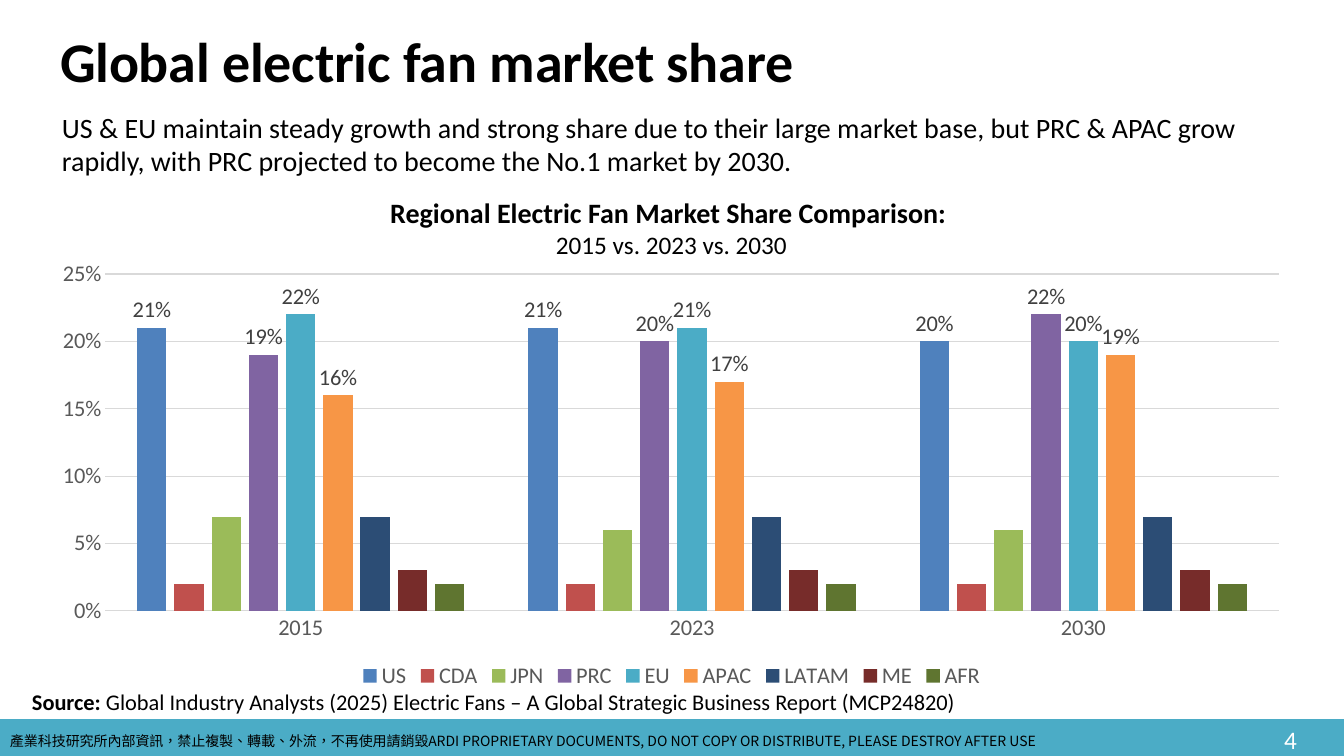
from lxml import etree
from pptx import Presentation
from pptx.chart.data import CategoryChartData
from pptx.dml.color import RGBColor
from pptx.enum.chart import (XL_CHART_TYPE as Chart, XL_LABEL_POSITION as LabelPos,
                             XL_LEGEND_POSITION as LegendPos, XL_TICK_MARK as Tick)
from pptx.enum.shapes import MSO_SHAPE as Shape
from pptx.enum.text import MSO_ANCHOR as Anchor, PP_ALIGN as Align
from pptx.oxml import parse_xml
from pptx.oxml.ns import nsdecls, qn
from pptx.util import Pt

PX = 914400 / 100.8
FONT, CJK_FONT = "Calibri", "Noto Sans CJK SC"
BLACK = RGBColor(0, 0, 0)
WHITE = RGBColor(255, 255, 255)
TEAL = RGBColor(0x4B, 0xAC, 0xC6)
AXIS_GREY = RGBColor(0x59, 0x59, 0x59)
LABEL_GREY = RGBColor(0x40, 0x40, 0x40)
GRID_GREY = RGBColor(0xD9, 0xD9, 0xD9)

# Each paragraph is a list of (text, size, bold) runs
TITLE = [[("Global electric fan market share", 40, True)]]
SUMMARY = [[("US & EU maintain steady growth and strong share due to their large market base, "
             "but PRC & APAC grow rapidly, with PRC projected to become the No.1 market by 2030.",
             20, False)]]
CHART_TITLE = [[("Regional Electric Fan Market Share Comparison: ", 20, True)],
               [("2015 vs. 2023 vs. 2030", 18, False)]]
SOURCE = [[("Source: ", 16, True),
           ("Global Industry Analysts (2025) Electric Fans – A Global Strategic "
            "Business Report (MCP24820)", 16, False)]]
NOTICE = [[("產業科技研究所內部資訊，禁止複製、轉載、外流，不再使用請銷毀"
            "ARDI PROPRIETARY DOCUMENTS, DO NOT COPY OR DISTRIBUTE, "
            "PLEASE DESTROY AFTER USE", 10, False)]]
PAGE = [[("4", 18, False)]]

YEARS = ["2015", "2023", "2030"]
# Region, shares, colour, labelled
REGIONS = [
    ("US", (0.21, 0.21, 0.2), RGBColor(0x4F, 0x81, 0xBD), True),
    ("CDA", (0.02, 0.02, 0.02), RGBColor(0xC0, 0x50, 0x4D), False),
    ("JPN", (0.07, 0.06, 0.06), RGBColor(0x9B, 0xBB, 0x59), False),
    ("PRC", (0.19, 0.2, 0.22), RGBColor(0x80, 0x64, 0xA2), True),
    ("EU", (0.22, 0.21, 0.2), TEAL, True),
    ("APAC", (0.16, 0.17, 0.19), RGBColor(0xF7, 0x96, 0x46), True),
    ("LATAM", (0.07, 0.07, 0.07), RGBColor(0x2C, 0x4D, 0x75), False),
    ("ME", (0.03, 0.03, 0.03), RGBColor(0x77, 0x2C, 0x2A), False),
    ("AFR", (0.02, 0.02, 0.02), RGBColor(0x5F, 0x75, 0x30), False),
]
CHART_BOX = (38, 252, 1267, 442)
PLOT_BOX = (105, 274, 1174, 337)


def px(*lengths):
    return [round(v * PX) for v in lengths]


def set_font(font, size, color, bold=False, name=FONT):
    values = {"size": Pt(size), "bold": bold, "name": name}
    for key, value in values.items():
        setattr(font, key, value)
    font.color.rgb = color


def add_text(s, box, paragraphs, color=BLACK, align=Align.LEFT, anchor=Anchor.TOP,
             name=FONT, margins=(10, 5, 10, 5)):
    tf = s.shapes.add_textbox(*px(*box)).text_frame
    tf.word_wrap, tf.vertical_anchor = True, anchor
    for side, margin in zip(("left", "top", "right", "bottom"), px(*margins)):
        setattr(tf, f"margin_{side}", margin)
    for i, runs in enumerate(paragraphs):
        p = tf.add_paragraph() if i else tf.paragraphs[0]
        p.alignment = align
        for text, size, bold in runs:
            r = p.add_run()
            r.text = text
            set_font(r.font, size, color, bold, name)
            ea = etree.SubElement(r.font._element, qn("a:ea"))
            ea.set("typeface", name)
    return tf


def place_plot(chart):
    """Fix the inner plot area as fractions of the chart box."""
    left, top, width, height = CHART_BOX
    x, y, w, h = PLOT_BOX
    parts = {"x": (x - left) / width, "y": (y - top) / height,
             "w": w / width, "h": h / height}
    modes = "".join(f'<c:{k}Mode val="edge"/>' for k in "xy")
    sizes = "".join(f'<c:{k} val="{v:.4f}"/>' for k, v in parts.items())
    layout = parse_xml(f'<c:layout {nsdecls("c")}><c:manualLayout>'
                       f'<c:layoutTarget val="inner"/>{modes}{sizes}'
                       '</c:manualLayout></c:layout>')
    plot_area = chart._chartSpace.chart.plotArea
    for old in plot_area.findall(qn("c:layout")):
        plot_area.remove(old)
    plot_area.insert(0, layout)


def add_share_chart(s):
    data = CategoryChartData(number_format="0%")
    data.categories = YEARS
    for region, shares, *_ in REGIONS:
        data.add_series(region, shares)
    chart = s.shapes.add_chart(Chart.COLUMN_CLUSTERED, *px(*CHART_BOX), data).chart
    set_font(chart.font, 16, BLACK)
    chart.has_title = False
    chart.has_legend = True
    chart.legend.position = LegendPos.BOTTOM
    chart.legend.include_in_layout = False
    set_font(chart.legend.font, 16, AXIS_GREY)

    cat, val = chart.category_axis, chart.value_axis
    for axis in (cat, val):
        axis.major_tick_mark = axis.minor_tick_mark = Tick.NONE
        set_font(axis.tick_labels.font, 16, AXIS_GREY)
    for line in (cat.format.line, val.major_gridlines.format.line):
        line.color.rgb, line.width = GRID_GREY, Pt(0.75)
    val.format.line.fill.background()
    val.minimum_scale, val.maximum_scale, val.major_unit = 0, 0.25, 0.05
    val.tick_labels.number_format = "0%"
    val.tick_labels.number_format_is_linked = False

    plot = chart.plots[0]
    plot.gap_width, plot.overlap, plot.vary_by_categories = 219, -27, False
    for series, (_, _, color, labelled) in zip(plot.series, REGIONS):
        series.format.fill.solid()
        series.format.fill.fore_color.rgb = color
        series.invert_if_negative = False
        if labelled:
            labels = series.data_labels
            labels.show_value = True
            labels.number_format, labels.number_format_is_linked = "0%", False
            labels.position = LabelPos.OUTSIDE_END
            set_font(labels.font, 16, LABEL_GREY)
    place_plot(chart)


def main():
    prs = Presentation()
    prs.slide_width, prs.slide_height = px(1344, 756)
    s = prs.slides.add_slide(prs.slide_layouts[6])

    band = s.shapes.add_shape(Shape.RECTANGLE, *px(0, 720, 1344, 36))
    band.shadow.inherit = False
    band.fill.solid()
    band.fill.fore_color.rgb = band.line.color.rgb = TEAL
    band.line.width = Pt(1)
    notice = add_text(s, (0, 728, 1195, 27), NOTICE, name=CJK_FONT)
    notice.paragraphs[0].runs[0].font._element.set("lang", "zh-TW")

    add_share_chart(s)
    add_text(s, (52, 105, 1239, 78), SUMMARY)
    add_text(s, (187, 191, 969, 75), CHART_TITLE, align=Align.CENTER)
    add_text(s, (22, 683, 1147, 37), SOURCE)
    title = add_text(s, (59, 25, 1126, 70), TITLE, anchor=Anchor.MIDDLE,
                     margins=(1, 1, 0, 0))
    title.paragraphs[0].runs[0].font._element.set("spc", "-10")
    add_text(s, (1005, 719, 302, 40), PAGE, WHITE, Align.RIGHT, Anchor.MIDDLE)
    prs.save("out.pptx")


if __name__ == "__main__":
    main()
